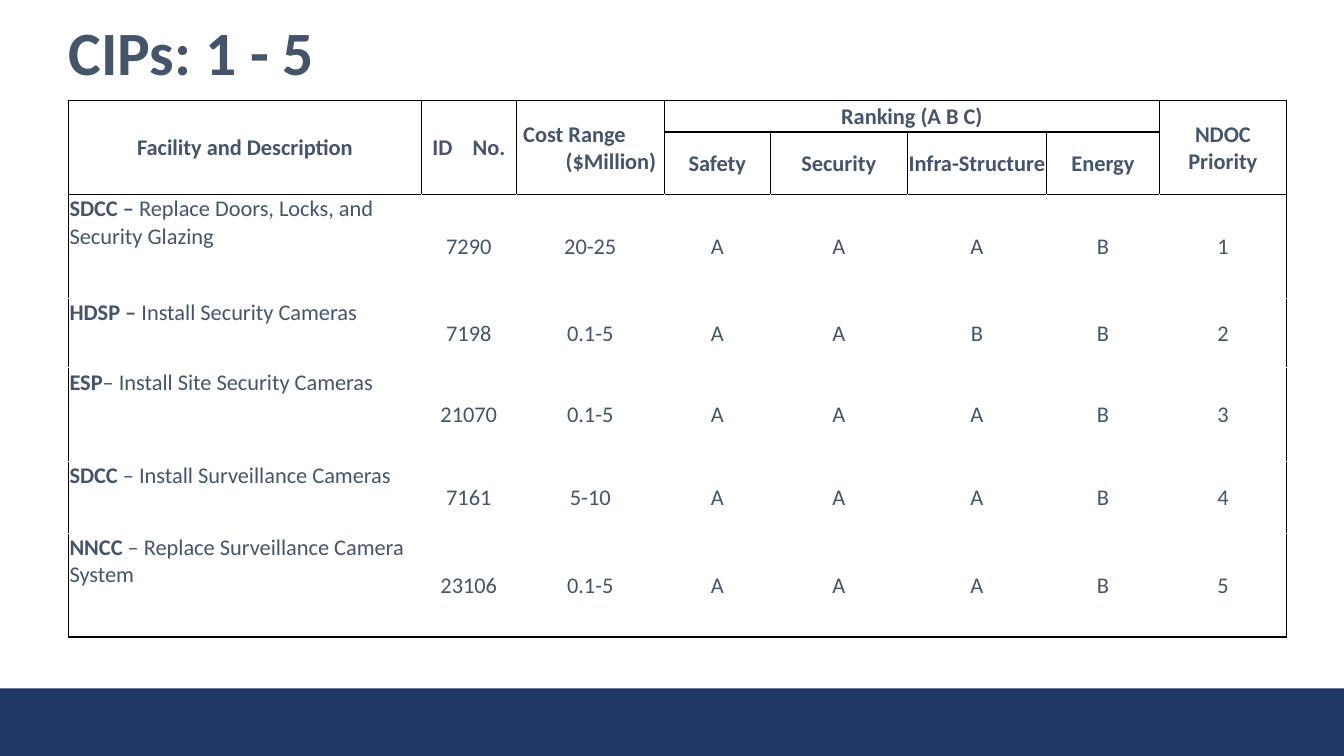
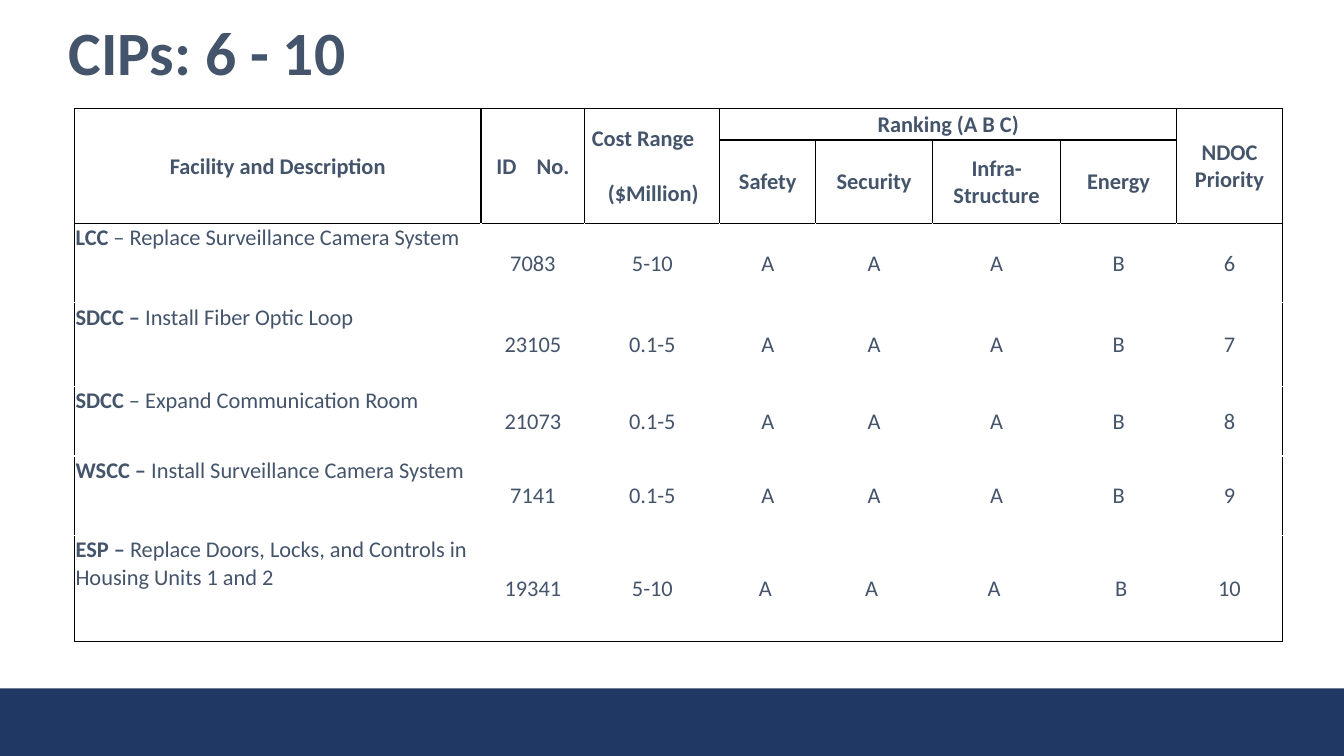
from lxml import etree
from pptx import Presentation
from pptx.dml.color import RGBColor
from pptx.enum.shapes import MSO_SHAPE
from pptx.enum.text import MSO_ANCHOR, MSO_AUTO_SIZE, PP_ALIGN
from pptx.oxml.ns import qn
from pptx.util import Inches, Pt

COLORS = {"text": "44546A", "band": "203864", "grid": "000000", "blank": "FFFFFF"}
FONT = "Calibri"
HEADER_ROWS = 2
RANKINGS = ["Safety", "Security", "Infra-Structure", "Energy"]
FIRST_RANK = 3

SLIDES = [
    {
        "title": "CIPs: 1 - 5",
        "at": (0.68, 1),
        "cols": [3.5, 0.94, 1.47, 1.05, 1.36, 1.38, 1.12, 1.26],
        "rows": [0.31, 0.62, 1.03, 0.69, 0.93, 0.71, 1.03],
        "unit_indent": 0.48,
        "unit_gap": 0,
        "projects": [
            ("SDCC – ", "Replace Doors, Locks, and Security Glazing",
             "7290", "20-25", "A", "A", "A", "B", "1"),
            ("HDSP – ", "Install Security Cameras",
             "7198", "0.1-5", "A", "A", "B", "B", "2"),
            ("ESP", "– Install Site Security Cameras",
             "21070", "0.1-5", "A", "A", "A", "B", "3"),
            ("SDCC", " – Install Surveillance Cameras",
             "7161", "5-10", "A", "A", "A", "B", "4"),
            ("NNCC", " – Replace Surveillance Camera System",
             "23106", "0.1-5", "A", "A", "A", "B", "5"),
        ],
    },
    {
        "title": "CIPs: 6 - 10",
        "at": (0.74, 1.08),
        "cols": [4.03, 1.03, 1.34, 0.95, 1.16, 1.27, 1.15, 1.05],
        "rows": [0.31, 0.82, 0.79, 0.83, 0.69, 0.79, 1.05],
        "unit_indent": 0.22,
        "unit_gap": 19.5,
        "projects": [
            ("LCC", " – Replace Surveillance Camera System",
             "7083", "5-10", "A", "A", "A", "B", "6"),
            ("SDCC – ", "Install Fiber Optic Loop",
             "23105", "0.1-5", "A", "A", "A", "B", "7"),
            ("SDCC", " – Expand Communication Room",
             "21073", "0.1-5", "A", "A", "A", "B", "8"),
            ("WSCC – ", "Install Surveillance Camera System",
             "7141", "0.1-5", "A", "A", "A", "B", "9"),
            ("ESP – ", "Replace Doors, Locks, and Controls in Housing Units 1 and 2",
             "19341", "5-10", "A ", "A ", "A ", " B", "10"),
        ],
    },
]


def color(name):
    return RGBColor.from_string(COLORS[name])


def add_run(p, text, size=16, bold=False, spacing=0):
    r = p.add_run()
    r.text = text
    r.font.name = FONT
    r.font.size = Pt(size)
    r.font.bold = bold
    r.font.color.rgb = color("text")
    if spacing:
        r.font._element.set("spc", str(round(spacing * 100)))


def write(cell, *runs, align=PP_ALIGN.CENTER):
    p = cell.text_frame.paragraphs[0]
    p.alignment = align
    for text, bold in runs:
        add_run(p, text, bold=bold)


def write_id_header(cell):
    write(cell, ("ID", True))
    p = cell.text_frame.paragraphs[0]
    add_run(p, " ", bold=True, spacing=10.8)
    add_run(p, "No.", bold=True)


def write_cost_header(cell, unit_indent, unit_gap):
    tf = cell.text_frame
    lines = [("Cost Range", 0.06, 0), ("($Million)", unit_indent, unit_gap)]
    for i, (text, indent, gap) in enumerate(lines):
        p = tf.add_paragraph() if i else tf.paragraphs[0]
        p.alignment = PP_ALIGN.LEFT
        p._p.get_or_add_pPr().set("marL", str(Inches(indent)))
        if gap:
            p.space_before = Pt(gap)
        add_run(p, text, bold=True)


def set_borders(cell, **sides):
    tcPr = cell._tc.get_or_add_tcPr()
    for i, (side, name) in enumerate(sides.items()):
        ln = etree.Element(qn("a:ln" + side), w=str(Pt(1)))
        fill = etree.SubElement(ln, qn("a:solidFill"))
        etree.SubElement(fill, qn("a:srgbClr"), val=COLORS[name])
        tcPr.insert(i, ln)


def format_cells(table):
    last_row, last_col = len(table.rows) - 1, len(table.columns) - 1
    for i, row in enumerate(table.rows):
        for j, cell in enumerate(row.cells):
            header = i < HEADER_ROWS
            cell.margin_left = cell.margin_right = cell.margin_top = Inches(0.01)
            cell.margin_bottom = 0
            top_aligned = j == 0 and not header
            cell.vertical_anchor = MSO_ANCHOR.TOP if top_aligned else MSO_ANCHOR.MIDDLE
            cell.fill.background()
            edges = {"L": j == 0, "R": j == last_col,
                     "T": i == HEADER_ROWS, "B": i == last_row}
            set_borders(cell, **{side: "grid" if header or edge else "blank"
                                 for side, edge in edges.items()})


def add_project_table(s, data):
    cols, rows = data["cols"], data["rows"]
    x, y = data["at"]
    table = s.shapes.add_table(len(rows), len(cols), Inches(x), Inches(y),
                               Inches(sum(cols)), Inches(sum(rows))).table
    table.first_row = table.horz_banding = False
    for column, width in zip(table.columns, cols):
        column.width = Inches(width)
    for row, height in zip(table.rows, rows):
        row.height = Inches(height)
    format_cells(table)

    last_col = len(cols) - 1
    last_rank = FIRST_RANK + len(RANKINGS) - 1
    for j in [*range(FIRST_RANK), last_col]:
        table.cell(0, j).merge(table.cell(HEADER_ROWS - 1, j))
    table.cell(0, FIRST_RANK).merge(table.cell(0, last_rank))

    write(table.cell(0, 0), ("Facility and Description", True))
    write_id_header(table.cell(0, 1))
    write_cost_header(table.cell(0, 2), data["unit_indent"], data["unit_gap"])
    write(table.cell(0, FIRST_RANK), ("Ranking (A B C)", True))
    write(table.cell(0, last_col), ("NDOC Priority", True))
    for j, ranking in enumerate(RANKINGS, FIRST_RANK):
        write(table.cell(1, j), (ranking, True))

    for i, (code, work, *values) in enumerate(data["projects"], HEADER_ROWS):
        write(table.cell(i, 0), (code, True), (work, False), align=PP_ALIGN.LEFT)
        for j, value in enumerate(values, 1):
            write(table.cell(i, j), (value, False))


def add_title(s, text):
    title = s.shapes.title
    title.left, title.top = Inches(0.58), Inches(0.17)
    title.width, title.height = Inches(3.25), Inches(0.83)
    tf = title.text_frame
    tf.auto_size = MSO_AUTO_SIZE.NONE
    tf.vertical_anchor = MSO_ANCHOR.TOP
    p = tf.paragraphs[0]
    p.alignment = PP_ALIGN.LEFT
    p.line_spacing = 0.9
    add_run(p, text, size=44, bold=True)


def move_band_to_layout(s, layout):
    band = s.shapes.add_shape(MSO_SHAPE.RECTANGLE, Inches(-0.01), Inches(6.83),
                              Inches(13.35), Inches(0.67))
    band.shadow.inherit = False
    band.fill.solid()
    band.fill.fore_color.rgb = color("band")
    band.line.fill.background()
    layout.shapes.element.insert(2, band.element)


def main():
    prs = Presentation()
    prs.slide_width, prs.slide_height = Inches(13.33), Inches(7.5)
    layout = prs.slide_layouts[5]
    for data in SLIDES:
        s = prs.slides.add_slide(layout)
        add_title(s, data["title"])
        add_project_table(s, data)
    move_band_to_layout(prs.slides[0], layout)
    prs.save("out.pptx")


if __name__ == "__main__":
    main()
